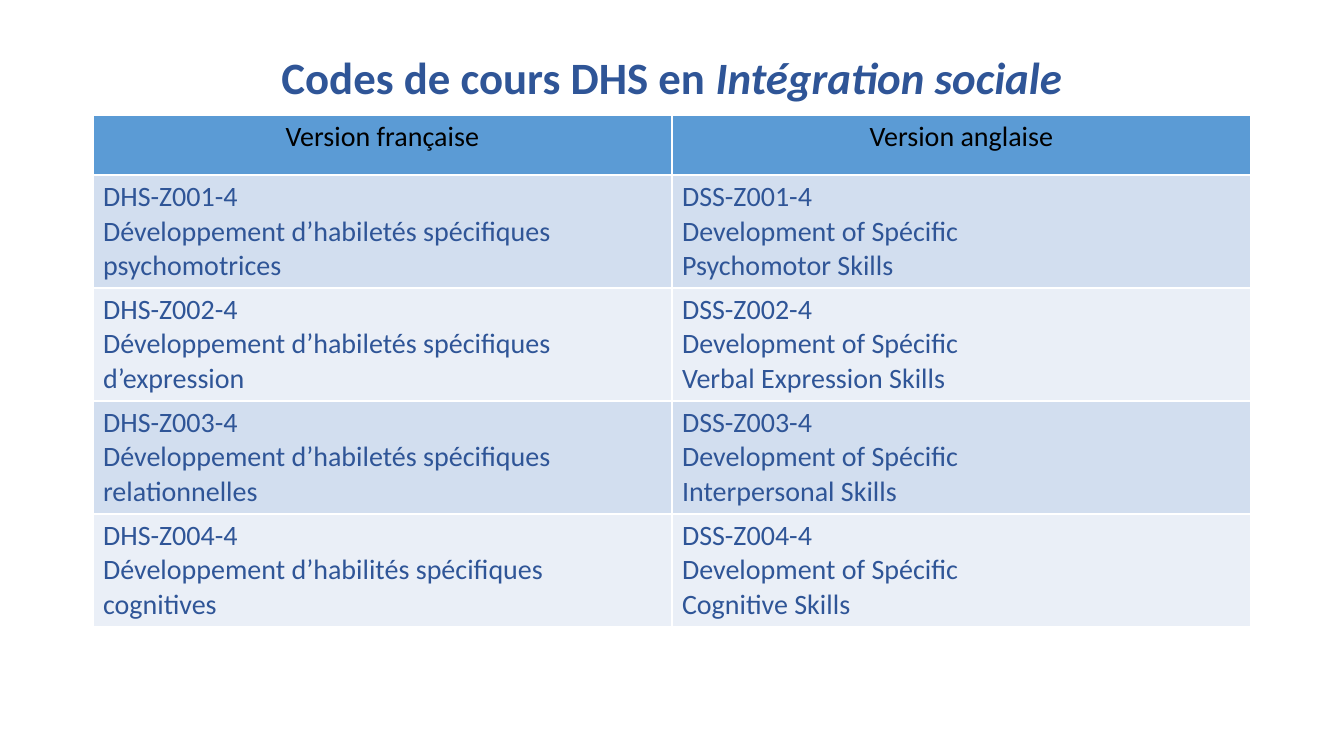
"""Build the slide of DHS course codes in French and English."""
import pptx
import pptx.util
import pptx.dml.color
import pptx.enum.text

RGB = pptx.dml.color.RGBColor
ALIGN = pptx.enum.text.PP_ALIGN
ANCHOR = pptx.enum.text.MSO_ANCHOR

TITLE = [("Codes de cours DHS en ", False), ("Intégration sociale", True)]
HEADS = ["Version française", "Version anglaise"]
ROWS = [
    (["DHS-Z001-4", "Développement d’habiletés spécifiques psychomotrices"],
     ["DSS-Z001-4", "Development of Spécific", "Psychomotor Skills"]),
    (["DHS-Z002-4", "Développement d’habiletés spécifiques", "d’expression"],
     ["DSS-Z002-4", "Development of Spécific", "Verbal Expression Skills"]),
    (["DHS-Z003-4", "Développement d’habiletés spécifiques", "relationnelles"],
     ["DSS-Z003-4", "Development of Spécific", "Interpersonal Skills"]),
    (["DHS-Z004-4", "Développement d’habilités spécifiques", "cognitives"],
     ["DSS-Z004-4", "Development of Spécific", "Cognitive Skills"]),
]

FONT = "Calibri"
NAVY = RGB(0x2F, 0x55, 0x97)
BLACK = RGB(0, 0, 0)
BLUE = RGB(0x5B, 0x9B, 0xD5)
BANDS = [RGB(0xD2, 0xDE, 0xEF), RGB(0xEA, 0xEF, 0xF7)]

WIDE, HIGH = 1344, 756
LEFT = 93
TOP = 115
COL = 579
HEAD, ROW = 60, 113


def px(num):
    """Turn px into EMU."""
    return pptx.util.Emu(round(num * 914400 / 100.8))


def add_run(para, text, size, color, bold=False, italic=False):
    """Add one styled run to a paragraph."""
    run = para.add_run()
    run.text = text
    font = run.font
    font.name, font.size = FONT, pptx.util.Pt(size)
    font.bold, font.italic = bold, italic
    font.color.rgb = color


def fill_cell(cell, lines, fill, color, align):
    """Colour a cell and write one paragraph for each line."""
    cell.fill.solid()
    cell.fill.fore_color.rgb = fill
    frame = cell.text_frame
    for num, line in enumerate(lines):
        para = frame.add_paragraph() if num else frame.paragraphs[0]
        para.alignment = align
        add_run(para, line, 20, color)


def add_title(slide):
    """Add the centred title."""
    box = slide.shapes.add_textbox(px(LEFT), px(12), px(2 * COL), px(136))
    frame = box.text_frame
    frame.word_wrap = True
    frame.vertical_anchor = ANCHOR.MIDDLE
    para = frame.paragraphs[0]
    para.alignment = ALIGN.CENTER
    para.line_spacing = 0.9
    for text, italic in TITLE:
        add_run(para, text, 32, NAVY, True, italic)


def add_codes(slide):
    """Add the table of course codes."""
    tall = HEAD + ROW * len(ROWS)
    table = slide.shapes.add_table(
        len(ROWS) + 1, len(HEADS), px(LEFT), px(TOP),
        px(COL * len(HEADS)), px(tall)).table
    for col in table.columns:
        col.width = px(COL)
    for num, row in enumerate(table.rows):
        row.height = px(ROW if num else HEAD)
    for col, head in enumerate(HEADS):
        fill_cell(table.cell(0, col), [head], BLUE, BLACK, ALIGN.CENTER)
    for num, row in enumerate(ROWS):
        for col, lines in enumerate(row):
            fill_cell(table.cell(num + 1, col), lines,
                      BANDS[num % 2], NAVY, ALIGN.LEFT)


def main():
    """Make the deck and save it."""
    deck = pptx.Presentation()
    deck.slide_width, deck.slide_height = px(WIDE), px(HIGH)
    slide = deck.slides.add_slide(deck.slide_layouts[6])
    add_title(slide)
    add_codes(slide)
    deck.save("out.pptx")


if __name__ == "__main__":
    main()
